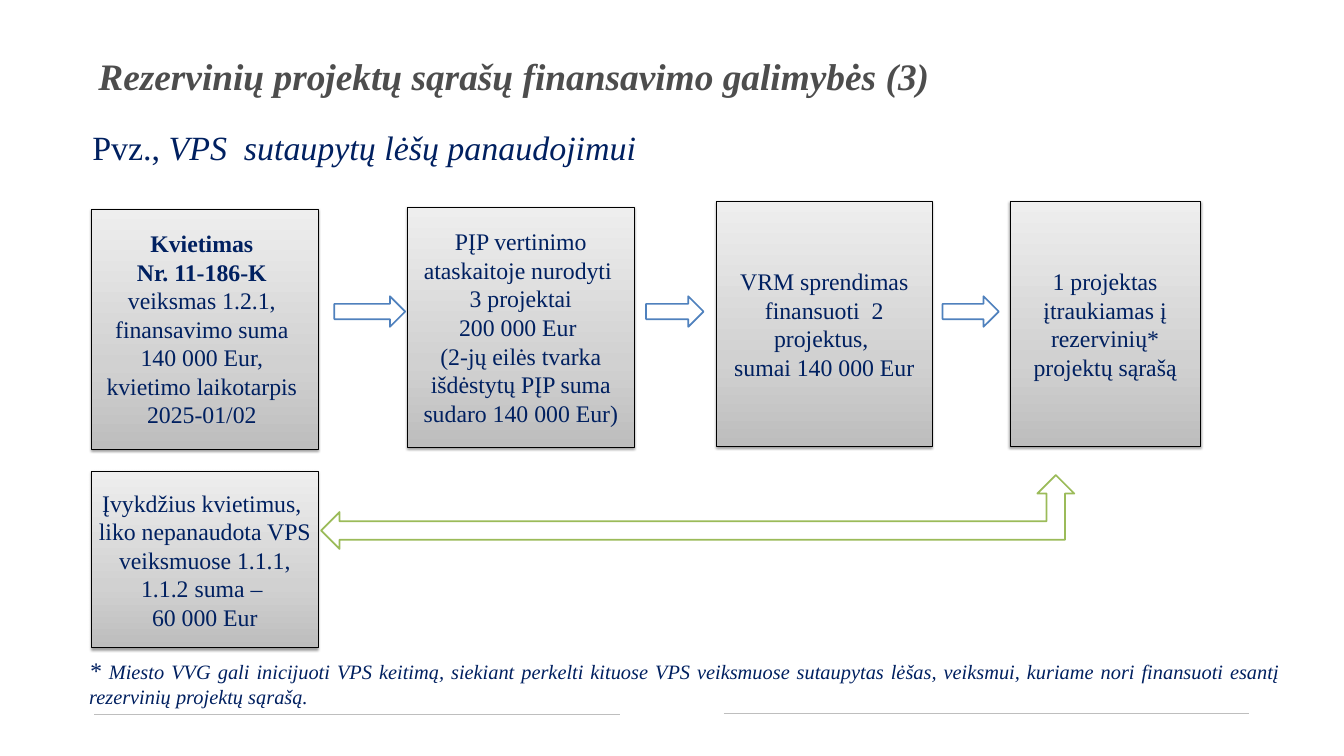
from copy import deepcopy

from lxml import etree
from pptx import Presentation
from pptx.dml.color import RGBColor
from pptx.enum.shapes import MSO_CONNECTOR, MSO_SHAPE
from pptx.enum.text import MSO_ANCHOR, PP_ALIGN
from pptx.oxml.ns import qn
from pptx.util import Pt

RECTANGLE = MSO_SHAPE.RECTANGLE
RIGHT_ARROW = MSO_SHAPE.RIGHT_ARROW
LEFT_UP_ARROW = MSO_SHAPE.LEFT_UP_ARROW
STRAIGHT = MSO_CONNECTOR.STRAIGHT
MIDDLE = MSO_ANCHOR.MIDDLE
LEFT, CENTER, JUSTIFY = PP_ALIGN.LEFT, PP_ALIGN.CENTER, PP_ALIGN.JUSTIFY

NAVY = RGBColor(0x00, 0x20, 0x60)
TITLE_GRAY = RGBColor(0x4D, 0x4D, 0x4D)
RULE_GRAY = RGBColor(0xBE, 0xBE, 0xBE)
BLACK = RGBColor(0x00, 0x00, 0x00)
WHITE = RGBColor(0xFF, 0xFF, 0xFF)
BLUE = RGBColor(0x4F, 0x81, 0xBD)
GREEN = RGBColor(0x9B, 0xBB, 0x59)
GRADIENT = [
    (0, RGBColor(0xBD, 0xBD, 0xBD)),
    (0.35, RGBColor(0xD1, 0xD1, 0xD1)),
    (1, RGBColor(0xEE, 0xEE, 0xEE)),
]
FONT = "Times New Roman"


def add_span(para, text, size, color=NAVY, bold=False, italic=False):
    span = para.add_run()
    span.text = text
    span.font.name = FONT
    span.font.size = Pt(size)
    span.font.color.rgb = color
    span.font.bold = bold
    span.font.italic = italic


def add_outlined(kind, place, color, width):
    shape = page.shapes.add_shape(kind, *[Pt(length) for length in place])
    shape.shadow.inherit = False
    shape.fill.solid()
    shape.fill.fore_color.rgb = WHITE
    shape.line.color.rgb = color
    shape.line.width = Pt(width)
    return shape


deck = Presentation()
deck.slide_width = Pt(1583)
deck.slide_height = Pt(891)
page = deck.slides.add_slide(deck.slide_layouts[6])

for left, top in [(110.9, 842), (852.5, 841)]:
    rule = page.shapes.add_connector(STRAIGHT, Pt(left), Pt(top), Pt(left + 619.2), Pt(top))
    rule.line.color.rgb = RULE_GRAY
    rule.line.width = Pt(0.4)
    etree.SubElement(rule._element.spPr, qn("a:effectLst"))

texts = [
    ((115.9, 63, 1416.2, 53.3), (0, 0), LEFT, [
        ("Rezervinių projektų sąrašų finansavimo galimybės (3)", 44, TITLE_GRAY, True, True),
    ]),
    ((108.7, 149, 1394.6, 477.4), (0, 0), LEFT, [
        ("Pvz., ", 40),
        ("VPS  sutaupytų lėšų panaudojimui", 40, NAVY, False, True),
    ]),
    ((97.9, 768.8, 1416.2, 70.6), (7.2, 3.6), JUSTIFY, [
        ("* ", 28, NAVY, False, True),
        ("Miesto VVG gali inicijuoti VPS keitimą, siekiant perkelti kituose VPS "
         "veiksmuose sutaupytas lėšas, veiksmui, kuriame nori finansuoti esantį "
         "rezervinių projektų sąrašą. ", 24, NAVY, False, True),
    ]),
]
for place, (side, edge), align, spans in texts:
    frame = page.shapes.add_textbox(*[Pt(length) for length in place]).text_frame
    frame.word_wrap = True
    frame.margin_left = frame.margin_right = Pt(side)
    frame.margin_top = frame.margin_bottom = Pt(edge)
    para = frame.paragraphs[0]
    para.alignment = align
    for span in spans:
        add_span(para, *span)

steps = [
    ((108, 246.2, 266.4, 283), 2, [
        "Kvietimas ",
        "Nr. 11-186-K ",
        "veiksmas 1.2.1,  finansavimo suma ",
        "140 000 Eur, ",
        "kvietimo laikotarpis ",
        "2025-01/02 ",
    ]),
    ((480.2, 243.9, 266.4, 283), 0, [
        "PĮP vertinimo ataskaitoje nurodyti ",
        "3 projektai",
        "200 000 Eur ",
        "(2-jų eilės tvarka išdėstytų PĮP suma sudaro 140 000 Eur)",
    ]),
    ((843.9, 237.6, 253.8, 288.7), 0, [
        "VRM sprendimas finansuoti  2 projektus, ",
        "sumai 140 000 Eur",
    ]),
    ((1189.5, 237.6, 224.2, 288.7), 0, [
        "1 projektas įtraukiamas į rezervinių* projektų sąrašą",
    ]),
    ((108, 555.5, 266.4, 208), 0, [
        "Įvykdžius kvietimus,  liko nepanaudota VPS veiksmuose 1.1.1, 1.1.2 suma – ",
        "60 000 Eur",
    ]),
]
for place, bold_count, lines in steps:
    box = add_outlined(RECTANGLE, place, BLACK, 0.75)
    box.fill.gradient()
    box.fill.gradient_angle = 90
    stop_list = box._element.spPr.find(".//" + qn("a:gsLst"))
    stop_list.append(deepcopy(stop_list[0]))
    for stop, (position, color) in zip(box.fill.gradient_stops, GRADIENT):
        stop.position = position
        stop.color.rgb = color

    effects = box._element.spPr.find(qn("a:effectLst"))
    shadow = etree.SubElement(effects, qn("a:outerShdw"), blurRad=str(Pt(3.1)),
                              dist=str(Pt(1.6)), dir="5400000", rotWithShape="0")
    shade = etree.SubElement(shadow, qn("a:srgbClr"), val=str(BLACK))
    etree.SubElement(shade, qn("a:alpha"), val="38000")

    frame = box.text_frame
    frame.word_wrap = True
    frame.vertical_anchor = MIDDLE
    for index, line in enumerate(lines):
        para = frame.add_paragraph() if index else frame.paragraphs[0]
        para.alignment = CENTER
        add_span(para, line, 28, bold=index < bold_count)

for left, width in [(393.8, 83.5), (761, 67.7), (1110.2, 66.2)]:
    add_outlined(RIGHT_ARROW, (left, 349.2, width, 36), BLUE, 2)
add_outlined(LEFT_UP_ARROW, (378.2, 559.9, 887.2, 87.1), GREEN, 2)

deck.save("out.pptx")
